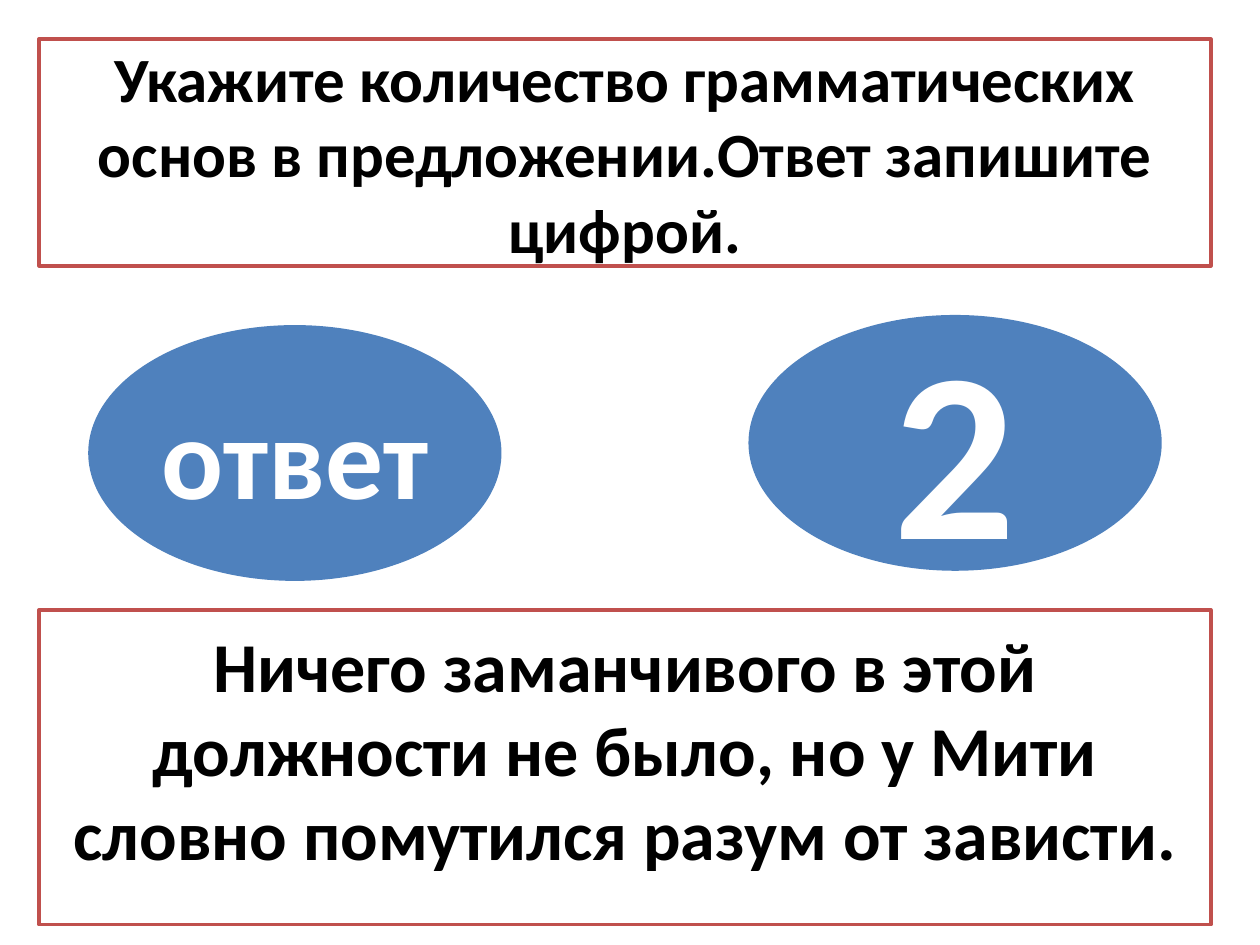
from dataclasses import dataclass

from pptx import Presentation
from pptx.dml.color import RGBColor
from pptx.enum.shapes import MSO_SHAPE
from pptx.enum.text import MSO_ANCHOR, MSO_AUTO_SIZE, PP_ALIGN
from pptx.util import Inches, Pt

WIDTH, HEIGHT = Inches(10), Inches(7.5)
WHITE = RGBColor(0xFF, 0xFF, 0xFF)
BLACK = RGBColor(0x00, 0x00, 0x00)
BLUE = RGBColor(0x4F, 0x81, 0xBD)
RED = RGBColor(0xC0, 0x50, 0x4D)


@dataclass(frozen=True)
class Area:
    """A rectangle in percent of the slide's width and height."""
    left: float
    top: float
    width: float
    height: float

    def emu(self) -> tuple[int, ...]:
        return tuple(round(share * side / 100) for share, side in (
            (self.left, WIDTH), (self.top, HEIGHT),
            (self.width, WIDTH), (self.height, HEIGHT)))


@dataclass(frozen=True)
class Oval:
    text: str
    size: int
    left: float
    top: float


OVAL_WIDTH, OVAL_HEIGHT = 32.8, 27.07
OVALS = (Oval("ответ", 66, 7, 34.4), Oval("2", 138, 59.4, 33.33))
QUESTION = Area(3.1, 4.13, 93, 24)
SENTENCE = Area(3.1, 64.53, 93, 33.33)


def write(sp, text: str, size: int, color: RGBColor) -> None:
    tf = sp.text_frame
    tf.text = text
    tf.word_wrap = True
    tf.auto_size = MSO_AUTO_SIZE.NONE
    tf.vertical_anchor = MSO_ANCHOR.MIDDLE
    p = tf.paragraphs[0]
    p.alignment = PP_ALIGN.CENTER
    p.font.name, p.font.size, p.font.bold = "Calibri", Pt(size), True
    p.font.color.rgb = color


def fill(sp, color: RGBColor) -> None:
    sp.fill.solid()
    sp.fill.fore_color.rgb = color


def style_frame(sp, text: str, size: int) -> None:
    """White box with a red outline and black text."""
    fill(sp, WHITE)
    sp.line.color.rgb = RED
    sp.line.width = Pt(2)
    write(sp, text, size, BLACK)


def add_shape(s, kind: MSO_SHAPE, area: Area):
    sp = s.shapes.add_shape(kind, *area.emu())
    sp.shadow.inherit = False
    return sp


def add_oval(s, oval: Oval) -> None:
    area = Area(oval.left, oval.top, OVAL_WIDTH, OVAL_HEIGHT)
    sp = add_shape(s, MSO_SHAPE.OVAL, area)
    fill(sp, BLUE)
    sp.line.fill.background()
    write(sp, oval.text, oval.size, WHITE)


def main() -> None:
    prs = Presentation()
    prs.slide_width, prs.slide_height = WIDTH, HEIGHT
    s = prs.slides.add_slide(prs.slide_layouts[5])

    title = s.shapes.title
    title.left, title.top, title.width, title.height = QUESTION.emu()
    style_frame(title, "Укажите количество грамматических основ в предложении."
                       "Ответ запишите цифрой.", 36)

    for oval in OVALS:
        add_oval(s, oval)

    sentence = add_shape(s, MSO_SHAPE.RECTANGLE, SENTENCE)
    style_frame(sentence, "Ничего заманчивого в этой должности не было, "
                          "но у Мити словно помутился разум от зависти.", 40)
    sentence.text_frame.margin_bottom = Inches(0.35)

    prs.save("out.pptx")


if __name__ == "__main__":
    main()
